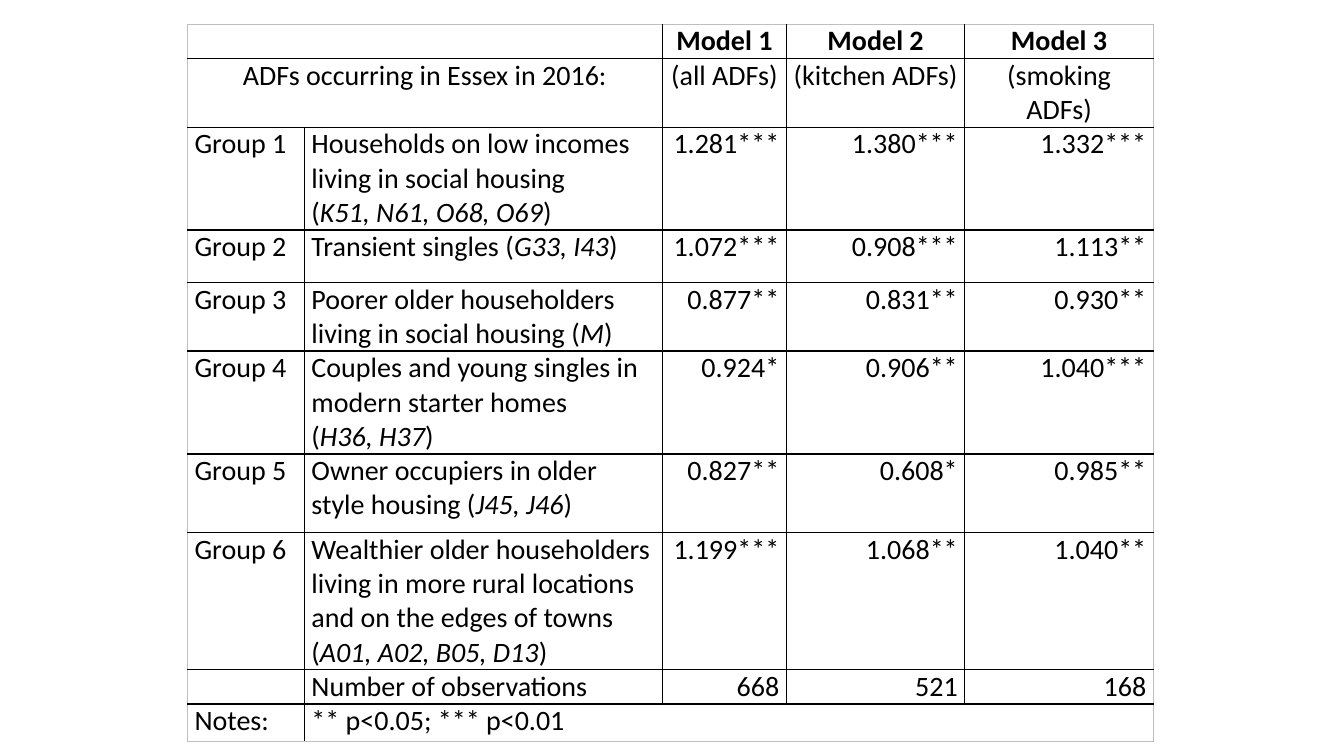
from dataclasses import dataclass

from lxml import etree
from pptx import Presentation
from pptx.dml.color import RGBColor
from pptx.enum.text import PP_ALIGN
from pptx.oxml.ns import qn
from pptx.util import Pt

LEFT, CENTER, RIGHT = PP_ALIGN.LEFT, PP_ALIGN.CENTER, PP_ALIGN.RIGHT
PX = 9144  # 100 px to the inch
BLANK_LAYOUT = 6


@dataclass(frozen=True)
class Theme:
    font: str = "Calibri"
    size: int = 20
    text: str = "000000"
    inner_line: str = "000000"
    outer_line: str = "BFBFBF"
    inner_width: float = 1
    outer_width: float = 0.5


THEME = Theme()

COLUMN_WIDTHS = [116, 355, 123, 177, 187]
ROW_HEIGHTS = [28, 45, 69, 52, 64, 78, 78, 103, 28, 37]
HEADER_ROWS = 2

# "|" switches italics on and off, a line break starts a new paragraph
ROWS = [
    ["", "", "Model 1", "Model 2", "Model 3"],
    ["ADFs occurring in Essex in 2016:", "", "(all ADFs)", "(kitchen ADFs)", "(smoking ADFs)"],
    ["Group 1", "Households on low incomes living in social housing\n(|K51, N61, O68, O69|)",
     "1.281***", "1.380***", "1.332***"],
    ["Group 2", "Transient singles (|G33, I43|)", "1.072***", "0.908***", "1.113**"],
    ["Group 3", "Poorer older householders living in social housing (|M|)",
     "0.877**", "0.831**", "0.930**"],
    ["Group 4", "Couples and young singles in modern starter homes\n(|H36, H37|)",
     "0.924*", "0.906**", "1.040***"],
    ["Group 5", "Owner occupiers in older style housing (|J45, J46|)",
     "0.827**", "0.608*", "0.985**"],
    ["Group 6", "Wealthier older householders living in more rural locations and on the edges "
     "of towns (|A01, A02, B05, D13|)", "1.199***", "1.068**", "1.040**"],
    ["", "Number of observations", "668", "521", "168"],
    ["Notes:", "** p<0.05; *** p<0.01", "", "", ""],
]
# First and last cell (row, column) of each merged range
MERGES = [((0, 0), (0, 1)), ((1, 0), (1, 1)), ((9, 1), (9, 4))]


def set_format(target, values):
    for name, value in values.items():
        setattr(target, name, value)


def write_text(cell, text, alignment, bold):
    frame = cell.text_frame
    for index, line in enumerate(text.split("\n")):
        paragraph = frame.paragraphs[0] if index == 0 else frame.add_paragraph()
        paragraph.alignment = alignment
        for part, words in enumerate(line.split("|")):
            run = paragraph.add_run()
            run.text = words
            set_format(run.font, {"name": THEME.font, "size": Pt(THEME.size),
                                  "bold": bold, "italic": part % 2 == 1})
            run.font.color.rgb = RGBColor.from_string(THEME.text)


def draw_borders(cell, outer_sides):
    """Rule all four sides; sides on the table's edge are lighter."""
    properties = cell._tc.get_or_add_tcPr()
    for index, side in enumerate("LRTB"):
        outer = side in outer_sides
        width = THEME.outer_width if outer else THEME.inner_width
        line = etree.Element(qn(f"a:ln{side}"), w=str(int(Pt(width))))
        fill = etree.SubElement(line, qn("a:solidFill"))
        etree.SubElement(fill, qn("a:srgbClr"),
                         val=THEME.outer_line if outer else THEME.inner_line)
        properties.insert(index, line)


def format_cell(cell, row, column):
    set_format(cell, {"margin_left": 7 * PX, "margin_right": 7 * PX,
                      "margin_top": 0, "margin_bottom": 0})
    cell.fill.background()
    last_column = column + (cell.span_width if cell.is_merge_origin else 1) - 1
    edges = {"L": column == 0, "R": last_column == len(COLUMN_WIDTHS) - 1,
             "T": row == 0, "B": row == len(ROWS) - 1}
    draw_borders(cell, [side for side, on_edge in edges.items() if on_edge])


def add_model_table(slide, left, top, width, height):
    shape = slide.shapes.add_table(len(ROWS), len(COLUMN_WIDTHS),
                                   left * PX, top * PX, width * PX, height * PX)
    table = shape.table
    set_format(table, {"first_row": False, "horz_banding": False})
    for column, column_width in zip(table.columns, COLUMN_WIDTHS):
        column.width = column_width * PX
    for row, row_height in zip(table.rows, ROW_HEIGHTS):
        row.height = row_height * PX
    shape.height = height * PX

    for first, last in MERGES:
        table.cell(*first).merge(table.cell(*last))

    for row, texts in enumerate(ROWS):
        for column, text in enumerate(texts):
            cell = table.cell(row, column)
            format_cell(cell, row, column)
            if text:
                body_alignment = LEFT if column < 2 else RIGHT
                alignment = CENTER if row < HEADER_ROWS else body_alignment
                write_text(cell, text, alignment, bold=row == 0)


def main():
    presentation = Presentation()
    set_format(presentation, {"slide_width": 1333 * PX, "slide_height": 750 * PX})
    slide = presentation.slides.add_slide(presentation.slide_layouts[BLANK_LAYOUT])

    # Regression results by household group
    add_model_table(slide, 186, 24, 959, 700)
    presentation.save("out.pptx")


if __name__ == "__main__":
    main()
